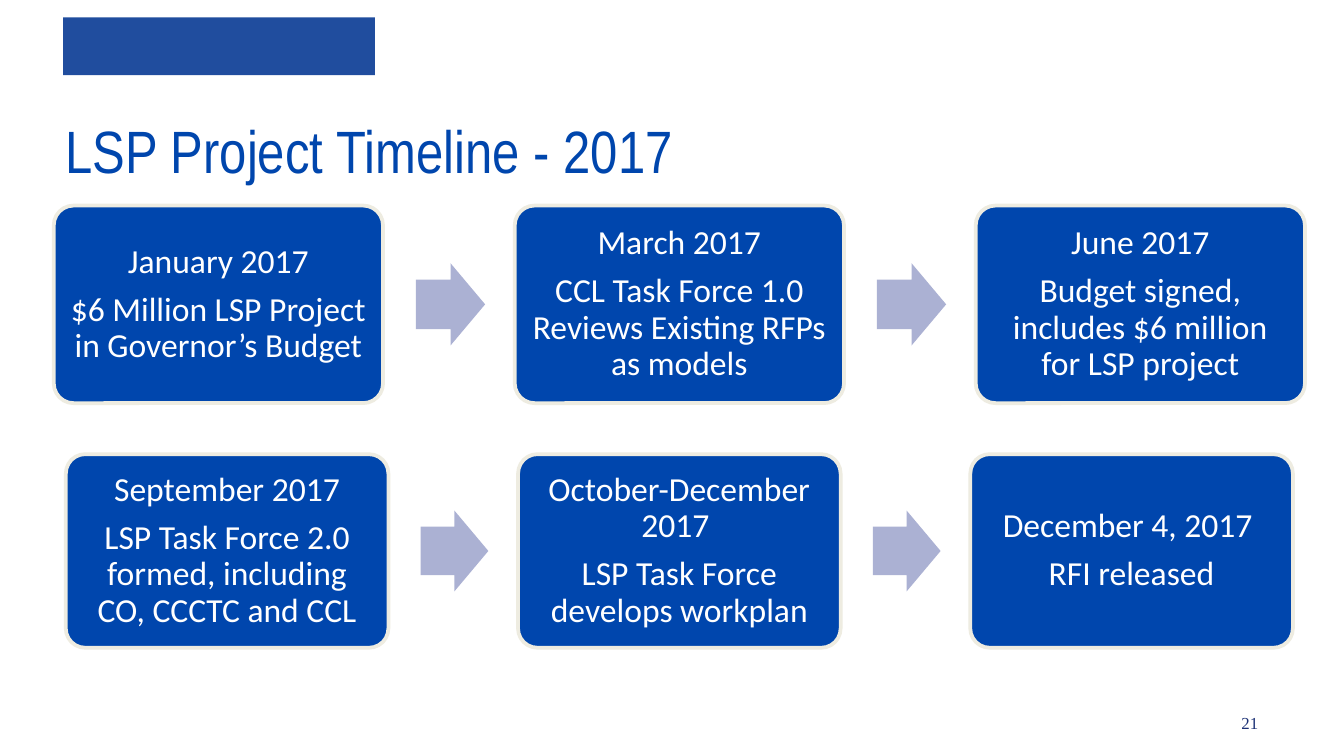
from pptx import Presentation
from pptx.dml.color import RGBColor
from pptx.enum.shapes import MSO_SHAPE
from pptx.enum.text import MSO_ANCHOR, PP_ALIGN
from pptx.util import Inches, Pt

COLORS = {"blue": "0046AD", "banner": "204D9E", "arrow": "ABB1D3",
          "border": "EEECE1", "white": "FFFFFF", "number": "1B3075"}

# 16:9 slide
prs = Presentation()
prs.slide_width, prs.slide_height = Inches(10), Inches(10 * 9 / 16)
s = prs.slides.add_slide(prs.slide_layouts[6])


def add_shape(kind, x, y, w, h, fill):
    sp = s.shapes.add_shape(kind, Inches(x), Inches(y), Inches(w), Inches(h))
    sp.shadow.inherit = False
    sp.fill.solid()
    sp.fill.fore_color.rgb = RGBColor.from_string(COLORS[fill])
    sp.line.fill.background()
    return sp


def add_run(p, text, size, font, color, align):
    p.alignment = align
    r = p.add_run()
    r.text = text
    r.font.size, r.font.name = Pt(size), font
    r.font.color.rgb = RGBColor.from_string(COLORS[color])


# Banner
add_shape(MSO_SHAPE.RECTANGLE, 0.47, 0.13, 2.32, 0.43, "banner")

# Title and page number
for text, x, y, w, h, size, font, color, align in [
    ("LSP Project Timeline - 2017", 0.39, 0.8, 5, 0.64, 32, "Arial Narrow", "blue", PP_ALIGN.LEFT),
    ("21", 7.97, 5.25, 1.49, 0.25, 9, "Times New Roman", "number", PP_ALIGN.RIGHT),
]:
    tf = s.shapes.add_textbox(Inches(x), Inches(y), Inches(w), Inches(h)).text_frame
    tf.word_wrap = True
    add_run(tf.paragraphs[0], text, size, font, color, align)

# Timeline rows: first left, last left, top, box width, steps
rows = [
    (0.4, 7.26, 1.53, 2.45, [
        ("January 2017", "$6 Million LSP Project in Governor’s Budget"),
        ("March 2017", "CCL Task Force 1.0 Reviews Existing RFPs as models"),
        ("June 2017", "Budget signed, includes $6 million for LSP project")]),
    (0.49, 7.22, 3.38, 2.4, [
        ("September 2017", "LSP Task Force 2.0 formed, including CO, CCCTC and CCL"),
        ("October-December 2017 ", "LSP Task Force develops workplan"),
        ("December 4, 2017 ", "RFI released")]),
]
for left, last, top, box_w, steps in rows:
    box_h, pitch = box_w * 0.6, (last - left) / (len(steps) - 1)
    arrow_w, arrow_h = box_w * 0.21, box_w * 0.25
    for i, step in enumerate(steps):
        x = left + i * pitch
        # Step box
        sp = add_shape(MSO_SHAPE.ROUNDED_RECTANGLE, x, top, box_w, box_h, "blue")
        sp.adjustments[0] = 0.1
        sp.line.color.rgb = RGBColor.from_string(COLORS["border"])
        sp.line.width = Pt(2)
        tf = sp.text_frame
        tf.word_wrap = True
        tf.vertical_anchor = MSO_ANCHOR.MIDDLE
        tf.margin_left = tf.margin_right = tf.margin_top = tf.margin_bottom = Inches(0.07)
        for j, text in enumerate(step):
            p = tf.add_paragraph() if j else tf.paragraphs[0]
            p.line_spacing = 0.9
            p.space_after = Pt(0 if j else 6.3)
            add_run(p, text, 18, "Calibri", "white", PP_ALIGN.CENTER)
        # Arrow to the next step
        if i < len(steps) - 1:
            sp = add_shape(MSO_SHAPE.RIGHT_ARROW, x + box_w * 1.1, top + (box_h - arrow_h) / 2,
                           arrow_w, arrow_h, "arrow")
            sp.adjustments[0] = 0.6
            sp.adjustments[1] = 0.5

prs.save("out.pptx")
